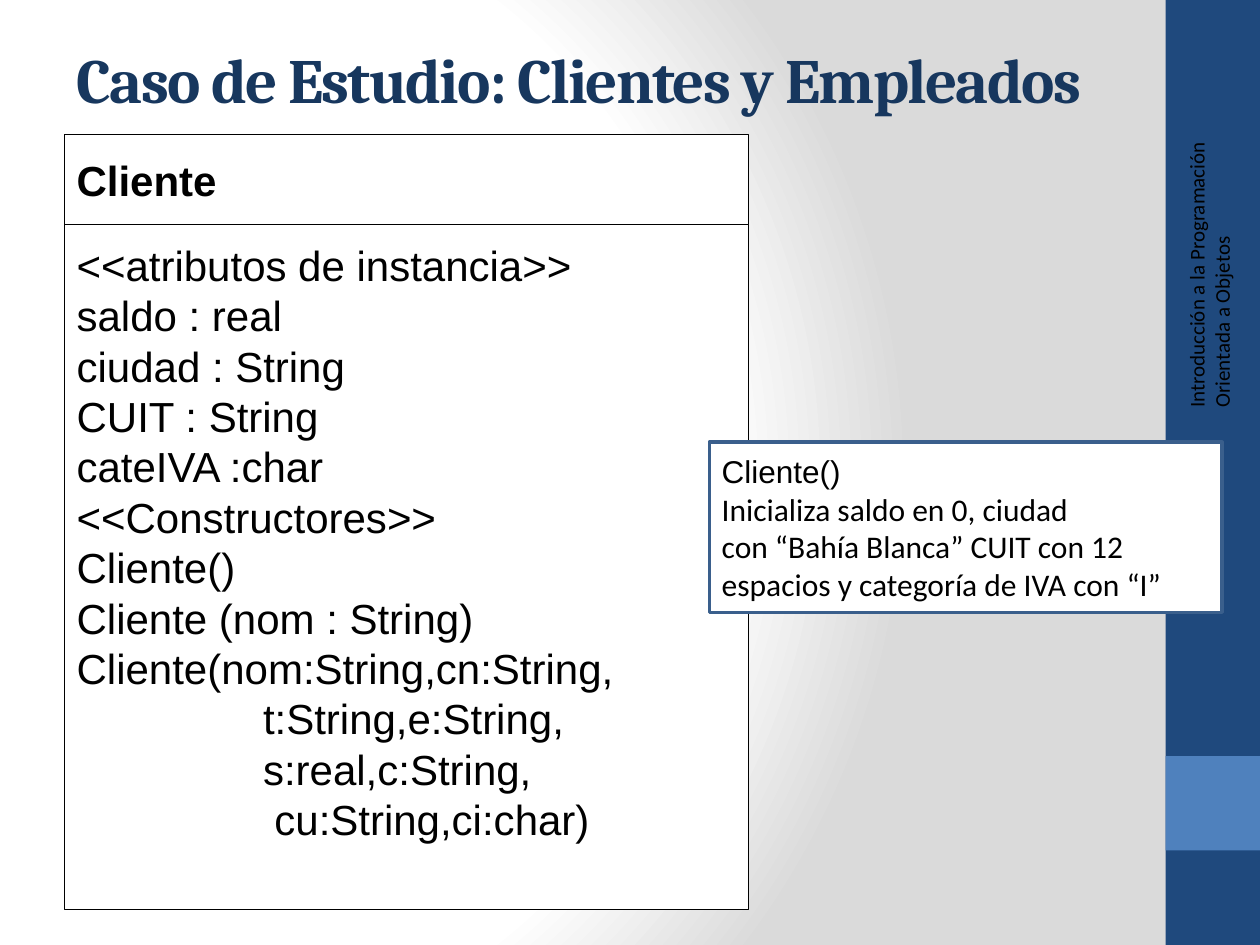
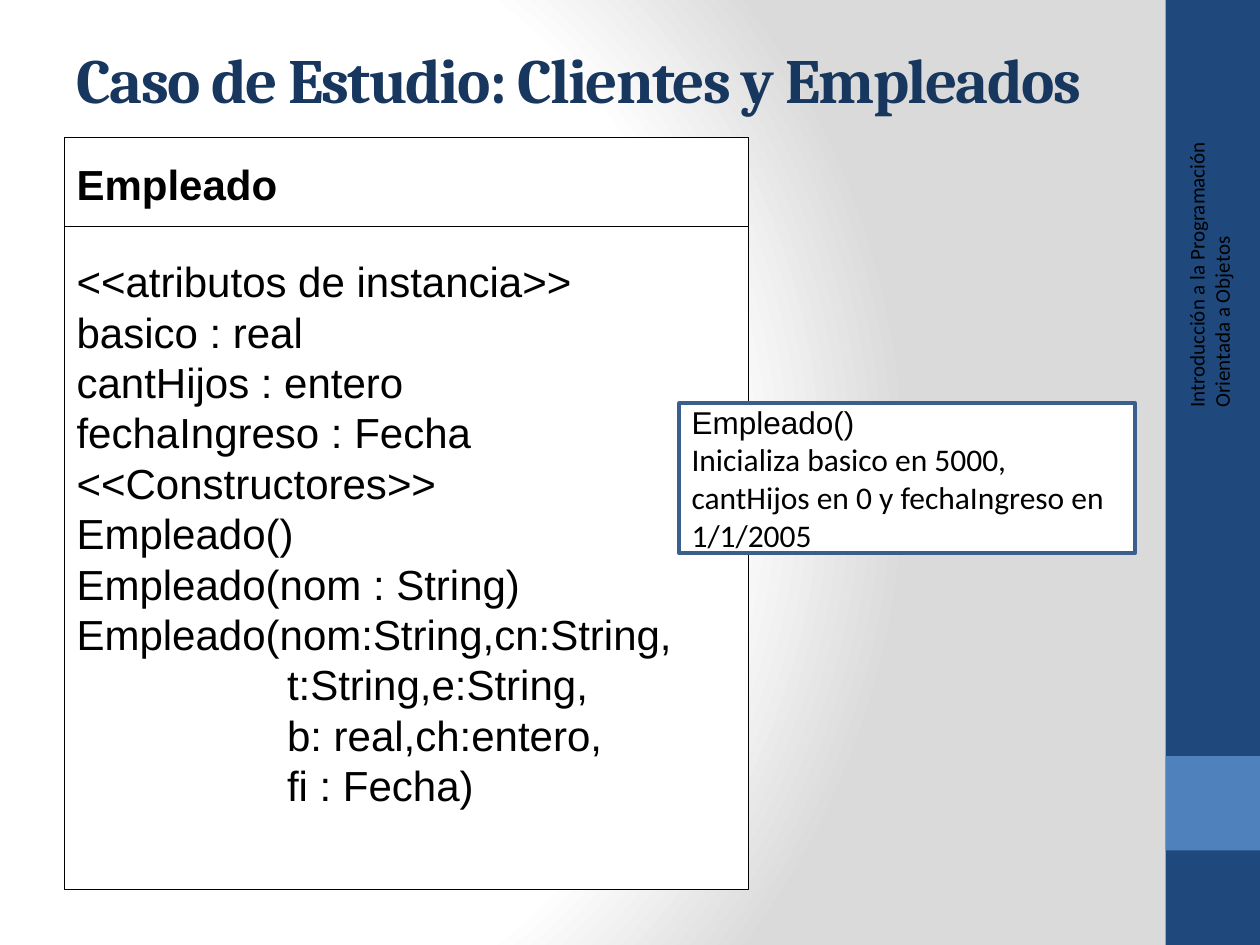
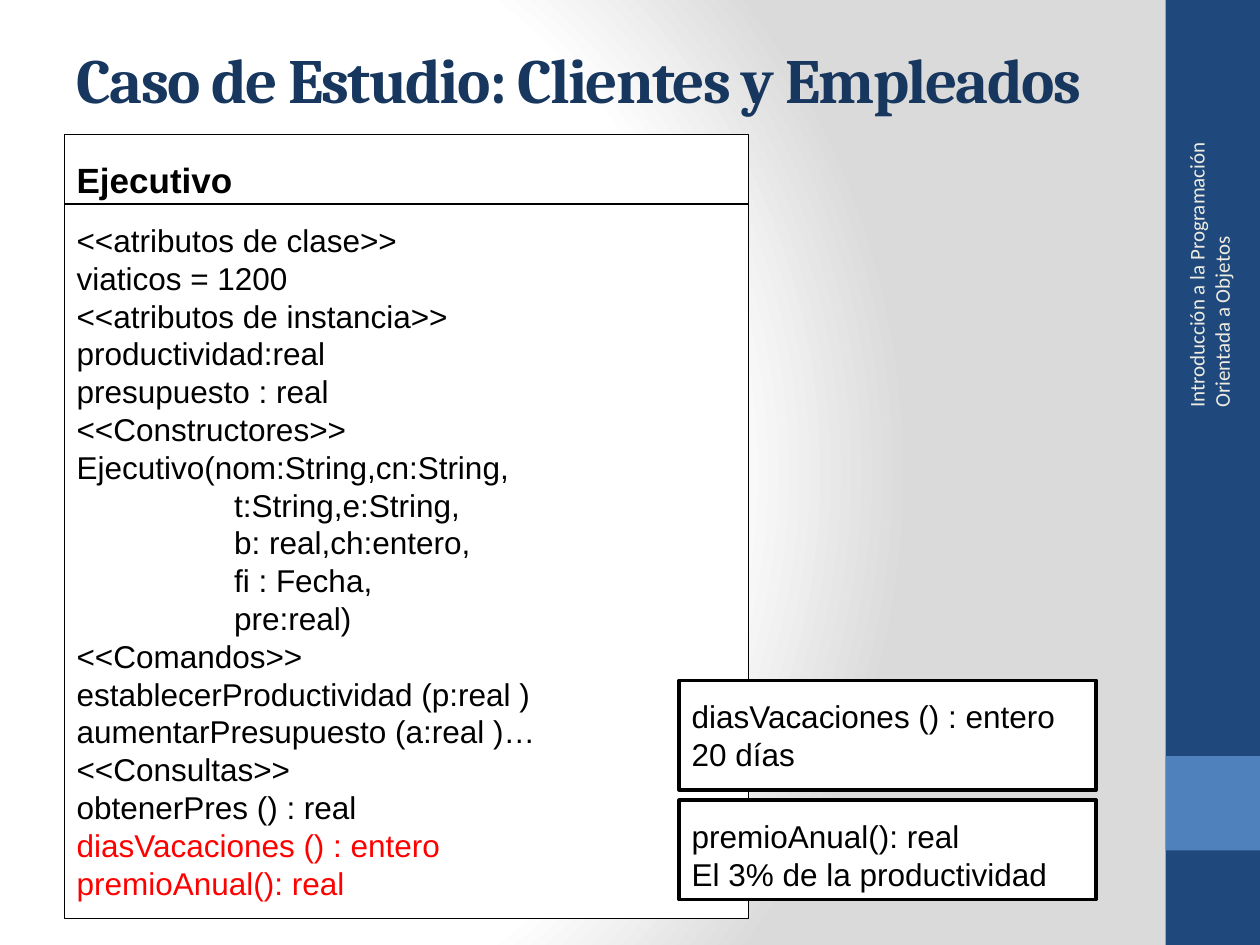
"""Build three class-diagram slides for the Clientes y Empleados case study."""
from dataclasses import dataclass

from pptx import Presentation
from pptx.dml.color import RGBColor
from pptx.enum.shapes import MSO_SHAPE as Preset
from pptx.enum.text import MSO_ANCHOR as Anchor, MSO_AUTO_SIZE as AutoSize, PP_ALIGN as Align
from pptx.oxml import parse_xml
from pptx.oxml.ns import nsdecls, qn
from pptx.util import Inches, Pt

COLORS = {
    "white": "FFFFFF",
    "gray": "DADADA",
    "black": "000000",
    "red": "FF0000",
    "cream": "EEECE1",
    "band": "1F497D",
    "accent": "4F81BD",
    "title": "17375E",
    "note": "3A5F8C",
}
TITLE = "Caso de Estudio: Clientes y Empleados"
COURSE = "Introducción a la Programación Orientada a Objetos"
CLASS_LEFT, CLASS_WIDTH = 0.51, 5.43
MARGIN = 0.05


@dataclass(frozen=True)
class Line:
    text: str
    indent: float = 0
    font: str = "Arial"
    color: str = "black"


@dataclass(frozen=True)
class Box:
    left: float
    top: float
    width: float
    height: float
    lines: tuple[Line, ...] = ()
    size: float = 18
    bold: bool = False
    fill: str = "white"
    line: str | None = "black"
    line_width: float = 0.75
    inset_top: float = MARGIN
    inset_bottom: float = MARGIN


@dataclass(frozen=True)
class ClassSlide:
    boxes: tuple[Box, ...]
    course_color: str = "black"


def rgb(name: str) -> RGBColor:
    return RGBColor.from_string(COLORS[name])


def plain(*texts: str, **style) -> tuple[Line, ...]:
    return tuple(Line(text, **style) for text in texts)


def heading(name: str, top: float, height: float, size: float = 24) -> Box:
    return Box(CLASS_LEFT, top, CLASS_WIDTH, height, plain(name), size, bold=True)


def members(top: float, height: float, lines: tuple[Line, ...], **style) -> Box:
    return Box(CLASS_LEFT, top, CLASS_WIDTH, height, lines, **style)


def write_text(frame, lines, *, size: float, bold: bool = False, spacing: int = 0,
               top: float = MARGIN, bottom: float = MARGIN) -> None:
    frame.word_wrap = True
    frame.auto_size = AutoSize.NONE
    frame.vertical_anchor = Anchor.MIDDLE
    frame.margin_top, frame.margin_bottom = Inches(top), Inches(bottom)
    for index, line in enumerate(lines):
        paragraph = frame.add_paragraph() if index else frame.paragraphs[0]
        paragraph.alignment = Align.LEFT
        if line.indent:
            paragraph._p.get_or_add_pPr().set("marL", str(Inches(line.indent)))
        run = paragraph.add_run()
        run.text = line.text
        run.font.name, run.font.size, run.font.bold = line.font, Pt(size), bold
        run.font.color.rgb = rgb(line.color)
        if spacing:
            run.font._element.set("spc", str(spacing))


def draw_box(slide, box: Box) -> None:
    shape = slide.shapes.add_shape(Preset.RECTANGLE, Inches(box.left), Inches(box.top),
                                   Inches(box.width), Inches(box.height))
    shape.shadow.inherit = False
    shape.fill.solid()
    shape.fill.fore_color.rgb = rgb(box.fill)
    if box.line:
        shape.line.color.rgb = rgb(box.line)
        shape.line.width = Pt(box.line_width)
    else:
        shape.line.fill.background()
    write_text(shape.text_frame, box.lines, size=box.size, bold=box.bold,
               top=box.inset_top, bottom=box.inset_bottom)


def set_background(master) -> None:
    master.background.fill.gradient()
    stops = "".join(
        f'<a:gs pos="{position * 1000}"><a:srgbClr val="{COLORS[name]}"/></a:gs>'
        for position, name in ((0, "white"), (75, "white"), (100, "gray"))
    )
    gradient = parse_xml(
        f'<a:gradFill {nsdecls("a")} rotWithShape="1"><a:gsLst>{stops}</a:gsLst>'
        '<a:path path="circle"><a:fillToRect l="20000" t="50000" r="100000" b="50000"/>'
        "</a:path></a:gradFill>"
    )
    current = master.element.find(".//" + qn("a:gradFill"))
    current.getparent().replace(current, gradient)


def add_class_slide(presentation, content: ClassSlide) -> None:
    slide = presentation.slides.add_slide(presentation.slide_layouts[5])
    title = slide.shapes.title
    title.left, title.top = Inches(CLASS_LEFT), Inches(0)
    title.width, title.height = Inches(8.67), Inches(1.25)
    write_text(title.text_frame, plain(TITLE, font="Cambria", color="title"),
               size=36, bold=True, spacing=-100)
    for band in BANDS:
        draw_box(slide, band)
    course = slide.shapes.add_textbox(Inches(8.26), Inches(1.8), Inches(2.67), Inches(0.4))
    course.rotation = 270
    write_text(course.text_frame, plain(COURSE, font="Calibri", color=content.course_color), size=12)
    for box in content.boxes:
        draw_box(slide, box)


BANDS = (
    Box(9.25, 0, 0.75, 7.5, fill="band", line=None),
    Box(9.25, 6, 0.75, 0.75, fill="accent", line=None),
)

CLIENT = ClassSlide((
    heading("Cliente", 1.07, 0.71),
    members(1.78, 5.44, (
        *plain("<<atributos de instancia>>", "saldo : real", "ciudad : String",
               "CUIT : String", "cateIVA :char", "<<Constructores>>", "Cliente()",
               "Cliente (nom : String)", "Cliente(nom:String,cn:String,"),
        *plain("t:String,e:String,", "s:real,c:String,", indent=1.48),
        Line("cu:String,ci:char)", indent=1.57),
    ), size=24, inset_bottom=0.45),
    Box(5.63, 3.51, 4.07, 1.35, (
        Line("Cliente()"),
        *plain("Inicializa saldo en 0, ciudad", "con “Bahía Blanca” CUIT con 12",
               "espacios y categoría de IVA con “I”", font="Calibri"),
    ), line="note", line_width=2),
))

EMPLOYEE = ClassSlide((
    heading("Empleado", 1.09, 0.73),
    members(1.8, 5.26, (
        *plain("<<atributos de instancia>>", "basico : real", "cantHijos : entero",
               "fechaIngreso : Fecha", "<<Constructores>>", "Empleado()",
               "Empleado(nom : String)", "Empleado(nom:String,cn:String,"),
        *plain("t:String,e:String,", "b: real,ch:entero,", "fi : Fecha)", indent=1.67),
    ), size=24, inset_bottom=0.45),
    Box(5.39, 3.2, 3.62, 1.19, (
        Line("Empleado()"),
        Line("Inicializa basico en 5000, cantHijos en 0 y fechaIngreso en 1/1/2005",
             font="Calibri"),
    ), line="note", line_width=2),
))

EXECUTIVE = ClassSlide((
    heading("Ejecutivo", 1.07, 0.71, size=20),
    members(1.62, 5.67, (
        *plain("<<atributos de clase>>", "viaticos = 1200", "<<atributos de instancia>>",
               "productividad:real", "presupuesto : real", "<<Constructores>>",
               "Ejecutivo(nom:String,cn:String,"),
        *plain("t:String,e:String,", "b: real,ch:entero,", "fi : Fecha,", "pre:real)",
               indent=1.25),
        *plain("<<Comandos>>", "establecerProductividad (p:real )",
               "aumentarPresupuesto (a:real )…", "<<Consultas>>", "obtenerPres () : real"),
        *plain("diasVacaciones () : entero", "premioAnual(): real", color="red"),
    )),
    Box(5.39, 5.4, 3.31, 0.87, plain("diasVacaciones () : entero", "20 días"), line_width=2),
    Box(5.39, 6.35, 3.31, 0.79, plain("premioAnual(): real", "El 3% de la productividad"),
        line_width=2, inset_top=0.13),
), course_color="cream")


def main() -> None:
    presentation = Presentation()
    presentation.slide_width, presentation.slide_height = Inches(10), Inches(7.5)
    set_background(presentation.slide_master)
    for content in (CLIENT, EMPLOYEE, EXECUTIVE):
        add_class_slide(presentation, content)
    presentation.save("out.pptx")


if __name__ == "__main__":
    main()
